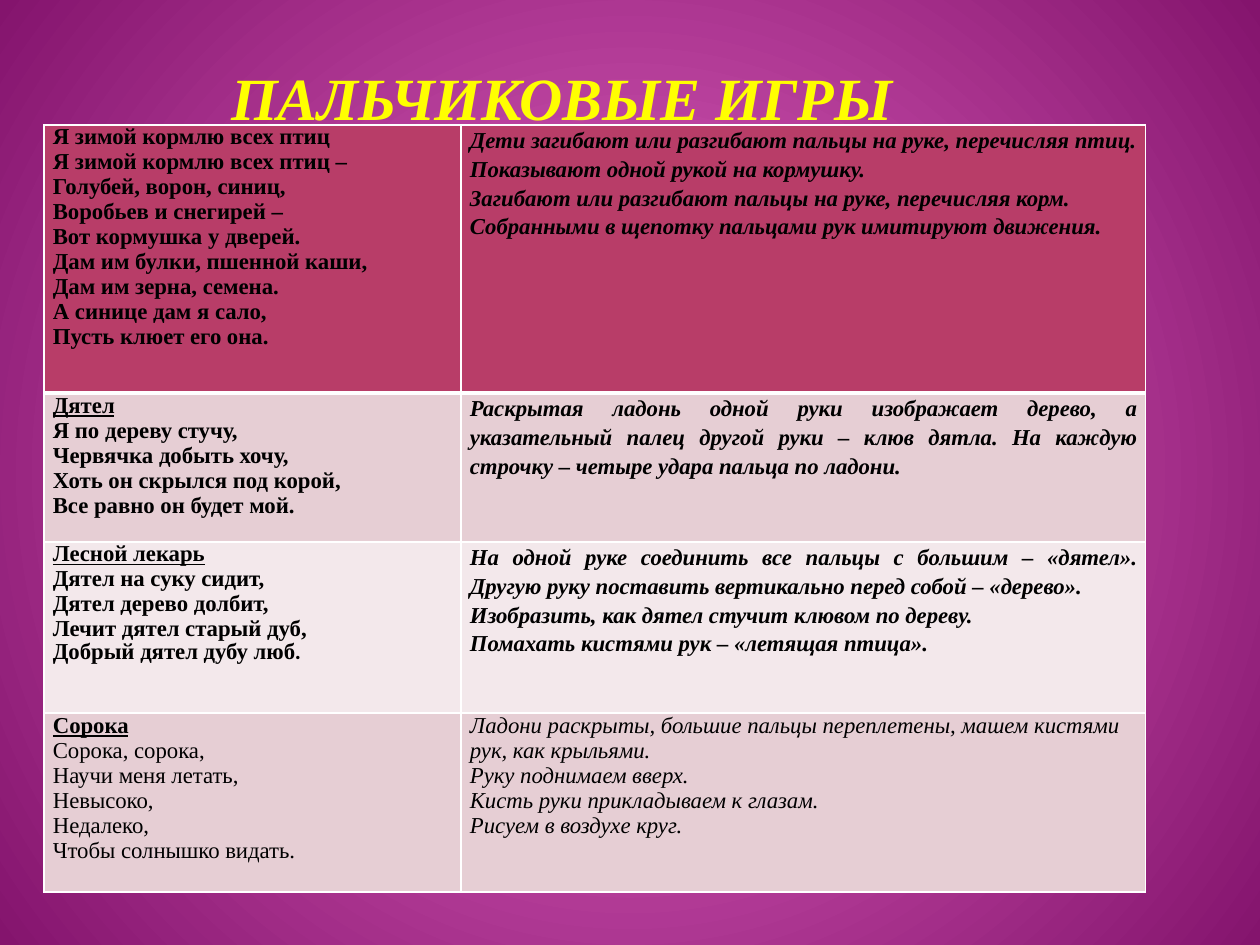
from dataclasses import dataclass

from lxml.etree import SubElement
from pptx import Presentation
from pptx.dml.color import RGBColor
from pptx.enum.text import MSO_ANCHOR, MSO_AUTO_SIZE, PP_ALIGN
from pptx.oxml.ns import qn
from pptx.util import Inches, Pt


@dataclass(frozen=True)
class Theme:
    """Colours, fonts and type sizes of the slide."""
    font: str = "Times New Roman"
    stop_font: str = "Calibri"
    title_size: float = 34.2
    text_size: float = 13
    title: str = "FFFF00"
    outline: str = "7A7276"
    text: str = "000000"
    border: str = "FFFFFF"
    glow: str = "E869C7"
    edge: str = "84146D"
    row_fills: tuple = ("B83D68", "E6CED4", "F3E8EB", "E6CED4")


@dataclass(frozen=True)
class Game:
    """A rhyme with its finger movements."""
    name: str
    rhyme: tuple
    moves: tuple
    underlined: bool = True
    strong: bool = True
    ending: str = ""


THEME = Theme()
COLUMNS, ROWS = 1000, 750
TITLE_AREA = (50, 35, 792, 125)
TABLE_AREA = (35, 99, 874, 609)
TABLE_COLUMNS = (331, 543)
TABLE_ROWS = (213, 118, 136, 142)

GAMES = (
    Game("Я зимой кормлю всех птиц",
         ("Я зимой кормлю всех птиц –", "Голубей, ворон, синиц,",
          "Воробьев и снегирей –", "Вот кормушка у дверей.",
          "Дам им булки, пшенной каши,", "Дам им зерна, семена.",
          "А синице дам я сало,", "Пусть клюет его она."),
         ("Дети загибают или разгибают пальцы на руке, перечисляя птиц.",
          "Показывают одной рукой на кормушку.",
          "Загибают или разгибают пальцы на руке, перечисляя корм.",
          "Собранными в щепотку пальцами рук имитируют движения."),
         underlined=False),
    Game("Дятел",
         ("Я по дереву стучу,", "Червячка добыть хочу,",
          "Хоть он скрылся под корой,", "Все равно он будет мой."),
         ("Раскрытая ладонь одной руки изображает дерево, а указательный палец "
          "другой руки – клюв дятла. На каждую строчку – четыре удара пальца по ладони.",)),
    Game("Лесной лекарь",
         ("Дятел на суку сидит,", "Дятел дерево долбит,", "Лечит дятел старый дуб,"),
         ("На одной руке соединить все пальцы с большим – «дятел». "
          "Другую руку поставить вертикально перед собой – «дерево».",
          "Изобразить, как дятел стучит клювом по дереву.",
          "Помахать кистями рук – «летящая птица»."),
         ending="Добрый дятел дубу люб"),
    Game("Сорока",
         ("Сорока, сорока,", "Научи меня летать,", "Невысоко,", "Недалеко,",
          "Чтобы солнышко видать."),
         ("Ладони раскрыты, большие пальцы переплетены, машем кистями рук, как крыльями.",
          "Руку поднимаем вверх.", "Кисть руки прикладываем к глазам.",
          "Рисуем в воздухе круг."),
         strong=False),
)


def grid(deck, area):
    """Turn left, top, width and height in grid units into lengths."""
    column, row = deck.slide_width / COLUMNS, deck.slide_height / ROWS
    return [round(value * unit) for value, unit in zip(area, (column, row) * 2)]


def write(para, text, font=THEME.font, size=THEME.text_size, color=THEME.text,
          bold=True, italic=False, underline=False, align=None, spacing=None):
    """Add a formatted span to a paragraph."""
    if align is not None:
        para.alignment = align
    if spacing is not None:
        para.line_spacing = spacing
    span = para.add_run()
    span.text = text
    span.font.name, span.font.size = font, Pt(size)
    span.font.bold, span.font.italic, span.font.underline = bold, italic, underline
    span.font.color.rgb = RGBColor.from_string(color)
    return span


def add_line(parent, tag, points, color):
    """Add a solid line element to a set of properties."""
    line = SubElement(parent, qn(tag), w=str(Pt(points)))
    SubElement(SubElement(line, qn("a:solidFill")), qn("a:srgbClr"), val=color)
    return line


def paint_background(page):
    """Fill the page with a round gradient from its centre."""
    fill = page.background.fill
    fill.gradient()
    for stop, color in zip(fill.gradient_stops, (THEME.glow, THEME.edge)):
        stop.color.rgb = RGBColor.from_string(color)
    gradient = page.element.find(".//" + qn("a:gradFill"))
    gradient.remove(gradient.find(qn("a:lin")))
    circle = SubElement(gradient, qn("a:path"), path="circle")
    SubElement(circle, qn("a:fillToRect"), dict.fromkeys("ltrb", "50000"))


def set_title(deck, page, text):
    """Place the title one line above the bottom of its box."""
    box = page.shapes.title
    box.left, box.top, box.width, box.height = grid(deck, TITLE_AREA)
    frame = box.text_frame
    frame.auto_size, frame.word_wrap = MSO_AUTO_SIZE.NONE, True
    frame.vertical_anchor = MSO_ANCHOR.BOTTOM
    frame.margin_left = frame.margin_right = Inches(0.05)
    frame.margin_top, frame.margin_bottom = 0, Inches(0.55)
    span = write(frame.paragraphs[0], text, size=THEME.title_size, color=THEME.title,
                 italic=True, align=PP_ALIGN.CENTER)
    properties = span.font.fill and span._r.get_or_add_rPr()
    properties.insert(0, add_line(properties, "a:ln", 0.04, THEME.outline))


def style_cell(cell, row):
    """Give a cell its borders, fill and margins."""
    properties = cell._tc.get_or_add_tcPr()
    top, bottom = 3 if row == 1 else 1, 3 if row == 0 else 1
    for side, points in zip("LRTB", (1, 1, top, bottom)):
        add_line(properties, "a:ln" + side, points, THEME.border)
    cell.fill.solid()
    cell.fill.fore_color.rgb = RGBColor.from_string(THEME.row_fills[row])
    cell.margin_left = cell.margin_right = Inches(0.07)
    cell.margin_top = cell.margin_bottom = 0


def write_lines(frame, lines, **style):
    """Write each line as a paragraph, starting in the empty first one."""
    for text in lines:
        first = frame.paragraphs[0]
        write(frame.add_paragraph() if first.runs else first, text, **style)


def fill_row(table, row, game):
    """Write a rhyme and its movements in one table row."""
    rhyme, moves = table.cell(row, 0), table.cell(row, 1)
    for cell in (rhyme, moves):
        style_cell(cell, row)
    write_lines(rhyme.text_frame, [game.name], underline=game.underlined)
    write_lines(rhyme.text_frame, game.rhyme, bold=game.strong)
    if game.ending:
        para = rhyme.text_frame.add_paragraph()
        write(para, game.ending, spacing=Pt(13.5))
        write(para, ".", font=THEME.stop_font)
    layout = {"align": PP_ALIGN.JUSTIFY, "spacing": 1.15} if game.strong else {}
    write_lines(moves.text_frame, game.moves, bold=game.strong, italic=True, **layout)


def add_games(deck, page):
    """Add the table of finger games."""
    table = page.shapes.add_table(len(GAMES), len(TABLE_COLUMNS), *grid(deck, TABLE_AREA)).table
    for column, units in zip(table.columns, TABLE_COLUMNS):
        column.width = round(deck.slide_width * units / COLUMNS)
    for row, units in zip(table.rows, TABLE_ROWS):
        row.height = round(deck.slide_height * units / ROWS)
    for row, game in enumerate(GAMES):
        fill_row(table, row, game)


def main():
    """Build and save the slide."""
    deck = Presentation()
    deck.slide_width, deck.slide_height = Inches(10), Inches(7.5)
    page = deck.slides.add_slide(deck.slide_layouts.get_by_name("Title Only"))
    paint_background(page)
    set_title(deck, page, "ПАЛЬЧИКОВЫЕ ИГРЫ")
    add_games(deck, page)
    deck.save("out.pptx")


if __name__ == "__main__":
    main()
